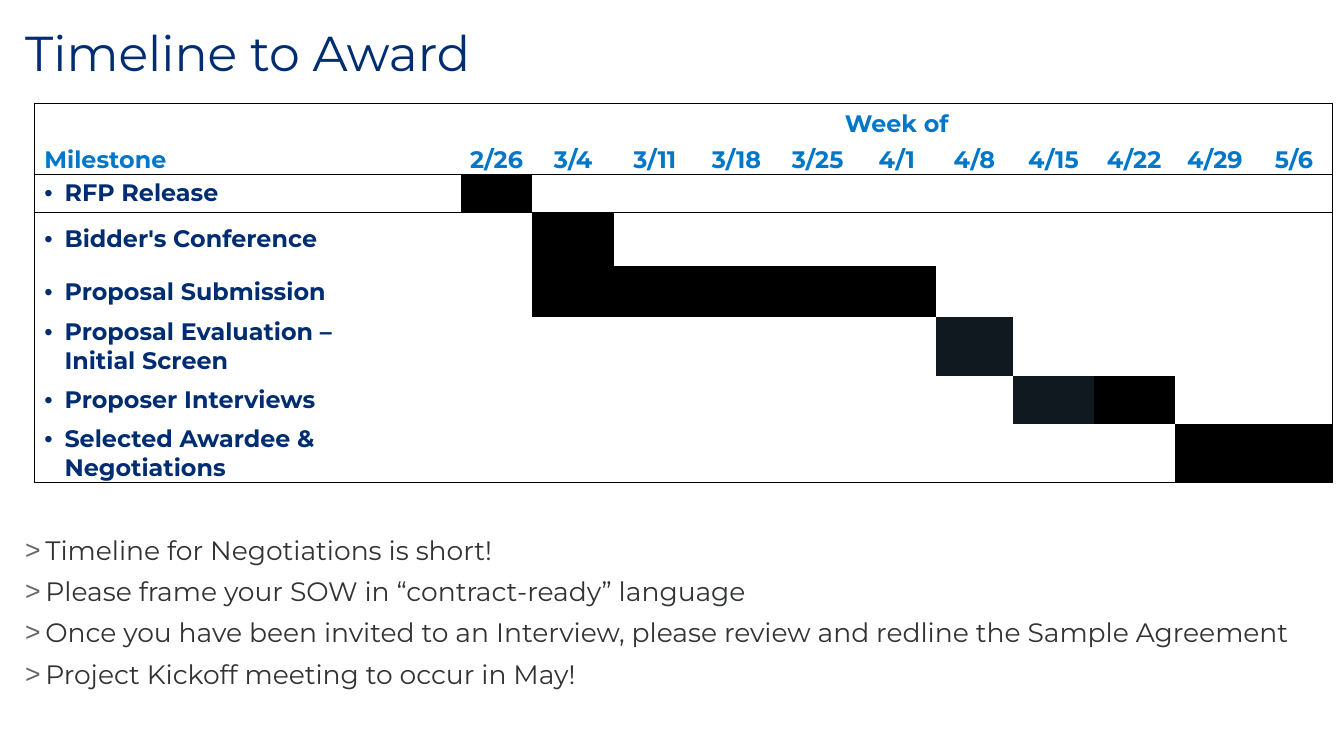
from dataclasses import dataclass

import pptx
import pptx.dml.color
import pptx.enum.text
import pptx.oxml
import pptx.oxml.ns
import pptx.util
from pptx.dml.color import RGBColor
from pptx.enum.text import MSO_ANCHOR, PP_ALIGN
from pptx.util import Inches, Pt

NAVY = RGBColor(0x00, 0x2D, 0x72)
BLUE = RGBColor(0x00, 0x77, 0xC8)
TEXT_GREY = RGBColor(0x32, 0x33, 0x35)
BULLET_GREY = RGBColor(0x63, 0x66, 0x6A)
BLACK = RGBColor(0x00, 0x00, 0x00)
INK = RGBColor(0x10, 0x18, 0x20)

FONT = "Montserrat"
TABLE_TEXT = 17
NO_STYLE = "{2D5ABB26-0587-4C30-8999-92F81FD0307C}"
NAMESPACE = pptx.oxml.ns.nsdecls("a")


@dataclass(frozen=True)
class Milestone:
    name: str
    height: float
    bars: dict[str, RGBColor]


WEEKS = ["2/26", "3/4", "3/11", "3/18", "3/25", "4/1",
         "4/8", "4/15", "4/22", "4/29", "5/6"]
COLUMN_WIDTHS = [4.23, 0.71, 0.81, 0.81, 0.81, 0.8, 0.77, 0.77, 0.8, 0.8, 0.8, 0.77]
HEADER_HEIGHTS = [0.41, 0.29]
MILESTONES = [
    Milestone("RFP Release", 0.38, {"2/26": BLACK}),
    Milestone("Bidder's Conference", 0.53, {"3/4": BLACK}),
    Milestone("Proposal Submission", 0.51, dict.fromkeys(WEEKS[1:6], BLACK)),
    Milestone("Proposal Evaluation – \vInitial Screen", 0.58, {"4/8": INK}),
    Milestone("Proposer Interviews", 0.48, {"4/15": INK, "4/22": BLACK}),
    Milestone("Selected Awardee & Negotiations", 0.58, {"4/29": BLACK, "5/6": BLACK}),
]
NOTES = [
    "Timeline for Negotiations is short!",
    "Please frame your SOW in “contract-ready” language",
    "Once you have been invited to an Interview, please review and redline "
    "the Sample Agreement",
    "Project Kickoff meeting to occur in May!",
]


def add_span(para, text: str, size: float, color: RGBColor, bold: bool = False) -> None:
    """Add text as runs, with a line break at each vertical tab."""
    for number, part in enumerate(text.split("\v")):
        if number:
            para.add_line_break()
        span = para.add_run()
        span.text = part
        span.font.name = FONT
        span.font.size = Pt(size)
        span.font.bold = bold
        span.font.color.rgb = color


def set_bullet(para, mark: str, color: RGBColor) -> None:
    properties = para._p.get_or_add_pPr()
    properties.set("marL", str(Inches(0.2)))
    properties.set("indent", str(-Inches(0.2)))
    for content in (f'<a:buClr {NAMESPACE}><a:srgbClr val="{color}"/></a:buClr>',
                    f'<a:buFont {NAMESPACE} typeface="Arial"/>',
                    f'<a:buChar {NAMESPACE} char="{mark}"/>'):
        properties.append(pptx.oxml.parse_xml(content))


def clear_margins(frame) -> None:
    frame.margin_left = frame.margin_right = 0
    frame.margin_top = frame.margin_bottom = 0


def set_borders(cell, widths: dict[str, float]) -> None:
    """Draw black borders; widths maps the sides L, R, T and B to points."""
    properties = cell._tc.get_or_add_tcPr()
    for side in "LRTB":
        if side in widths:
            properties.append(pptx.oxml.parse_xml(
                f'<a:ln{side} {NAMESPACE} w="{Pt(widths[side])}"><a:solidFill>'
                f'<a:srgbClr val="{BLACK}"/></a:solidFill></a:ln{side}>'))


def border_widths(row: int, column: int) -> dict[str, float]:
    """Frame the table and rule off its two header rows."""
    last_row, last_column = len(MILESTONES) + 1, len(WEEKS)
    widths = {}
    if column == 0:
        widths["L"] = 1
    if column == last_column or (row, column) == (0, 1):
        widths["R"] = 1
    if row in (0, 2):
        widths["T"] = 0.5 if row else 1
    if row in (1, last_row):
        widths["B"] = 0.5 if row == 1 else 1
    return widths


def add_title(slide) -> None:
    title = slide.shapes.title
    title.left, title.top = Inches(0.25), Inches(0.29)
    title.width, title.height = Inches(12.74), Inches(1)
    frame = title.text_frame
    clear_margins(frame)
    frame.vertical_anchor = MSO_ANCHOR.TOP
    para = frame.paragraphs[0]
    para.alignment = PP_ALIGN.LEFT
    para.line_spacing = 0.9
    add_span(para, "Timeline to Award", 35, NAVY)


def add_timeline(slide) -> None:
    heights = HEADER_HEIGHTS + [milestone.height for milestone in MILESTONES]
    frame = slide.shapes.add_table(
        len(heights), len(COLUMN_WIDTHS), Inches(0.34), Inches(1.03),
        Inches(sum(COLUMN_WIDTHS)), Inches(sum(heights)))
    table = frame.table
    table.first_row = table.horz_banding = False
    table._tbl.tblPr.find(pptx.oxml.ns.qn("a:tableStyleId")).text = NO_STYLE
    for column, width in zip(table.columns, COLUMN_WIDTHS):
        column.width = Inches(width)
    for row, height in zip(table.rows, heights):
        row.height = Inches(height)

    for row in range(len(heights)):
        for column in range(len(COLUMN_WIDTHS)):
            cell = table.cell(row, column)
            clear_margins(cell)
            cell.vertical_anchor = MSO_ANCHOR.MIDDLE
            set_borders(cell, border_widths(row, column))
            cell.fill.background()

    week_cell = table.cell(0, 1)
    week_cell.merge(table.cell(0, len(WEEKS)))
    week_cell.margin_top = week_cell.margin_bottom = Inches(0.06)
    for column, heading in [(1, "Week of")]:
        para = table.cell(0, column).text_frame.paragraphs[0]
        para.alignment = PP_ALIGN.CENTER
        add_span(para, heading, TABLE_TEXT, BLUE, bold=True)

    for column, heading in enumerate(["Milestone", *WEEKS]):
        para = table.cell(1, column).text_frame.paragraphs[0]
        para.alignment = PP_ALIGN.CENTER if column else PP_ALIGN.LEFT
        add_span(para, heading, TABLE_TEXT, BLUE, bold=True)
    table.cell(1, 0).margin_left = Inches(0.1)

    for row, milestone in enumerate(MILESTONES, start=2):
        name_cell = table.cell(row, 0)
        name_cell.margin_left = Inches(0.1)
        para = name_cell.text_frame.paragraphs[0]
        para.space_before = Pt(6)
        set_bullet(para, "•", NAVY)
        add_span(para, milestone.name, TABLE_TEXT, NAVY, bold=True)
        for week, color in milestone.bars.items():
            bar = table.cell(row, WEEKS.index(week) + 1)
            bar.fill.solid()
            bar.fill.fore_color.rgb = color


def add_notes(slide) -> None:
    box = slide.shapes.add_textbox(Inches(0.25), Inches(5.33), Inches(13.08), Inches(1.65))
    frame = box.text_frame
    frame.word_wrap = True
    clear_margins(frame)
    for number, note in enumerate(NOTES):
        para = frame.add_paragraph() if number else frame.paragraphs[0]
        para.line_spacing = 0.9
        para.space_before = Pt(9 if number else 0)
        set_bullet(para, ">", BULLET_GREY)
        add_span(para, note, 19, TEXT_GREY)


def main() -> None:
    deck = pptx.Presentation()
    deck.slide_width, deck.slide_height = Inches(13.33), Inches(7.5)
    slide = deck.slides.add_slide(deck.slide_layouts[5])
    add_title(slide)
    add_timeline(slide)
    add_notes(slide)
    deck.save("out.pptx")


if __name__ == "__main__":
    main()
